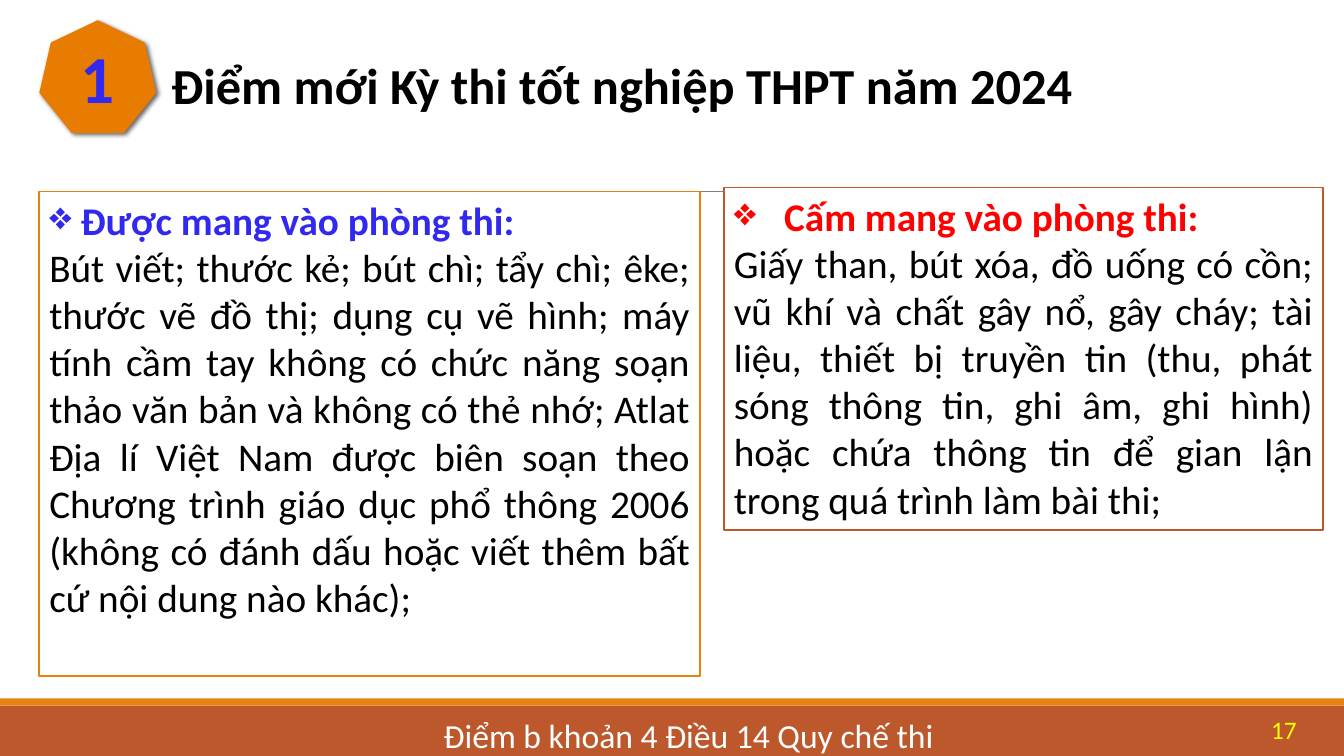
from lxml.etree import SubElement
from pptx import Presentation
from pptx.dml.color import RGBColor
from pptx.enum.shapes import MSO_CONNECTOR, MSO_SHAPE
from pptx.enum.text import MSO_ANCHOR as Anchor, PP_ALIGN as Align
from pptx.oxml.ns import qn
from pptx.util import Inches, Pt

COLORS = {
    "white": "FFFFFF", "black": "000000", "red": "FF0000", "blue": "3129EE",
    "yellow": "FFFF00", "rust": "BD582C", "orange": "E48312",
    "badge": "E77C00", "gray": "808080",
}
ALLOWED = (
    "Bút viết; thước kẻ; bút chì; tẩy chì; êke; thước vẽ đồ thị; dụng cụ vẽ hình; "
    "máy tính cầm tay không có chức năng soạn thảo văn bản và không có thẻ nhớ; "
    "Atlat Địa lí Việt Nam được biên soạn theo Chương trình giáo dục phổ thông 2006 "
    "(không có đánh dấu hoặc viết thêm bất cứ nội dung nào khác);"
)
BANNED = (
    "Giấy than, bút xóa, đồ uống có cồn; vũ khí và chất gây nổ, gây cháy; tài liệu, "
    "thiết bị truyền tin (thu, phát sóng thông tin, ghi âm, ghi hình) hoặc chứa "
    "thông tin để gian lận trong quá trình làm bài thi;"
)


def color(name):
    return RGBColor.from_string(COLORS[name])


def write(paragraph, text, size, color_name, bold=False, align=Align.LEFT):
    paragraph.alignment = align
    run = paragraph.add_run()
    run.text = text
    font_format = {"name": "Calibri", "size": Pt(size), "bold": bold}
    for attribute, value in font_format.items():
        setattr(run.font, attribute, value)
    run.font.color.rgb = color(color_name)


def add_bullet(paragraph, indent):
    properties = paragraph._p.get_or_add_pPr()
    properties.set("marL", str(Inches(indent)))
    properties.set("indent", str(-Inches(indent)))
    SubElement(properties, qn("a:buChar"), char="❖")


def add_block(slide, box, fill, line=None, preset=MSO_SHAPE.RECTANGLE):
    shape = slide.shapes.add_shape(preset, *map(Inches, box))
    shape.shadow.inherit = False
    shape.fill.solid()
    shape.fill.fore_color.rgb = color(fill)
    if line:
        shape.line.color.rgb = color(line)
        shape.line.width = Pt(1.25)
    else:
        shape.line.fill.background()
    return shape


def add_label(slide, box, text, size, color_name, bold=False,
              align=Align.LEFT, anchor=Anchor.TOP):
    frame = slide.shapes.add_textbox(*map(Inches, box)).text_frame
    frame.word_wrap = True
    frame.vertical_anchor = anchor
    write(frame.paragraphs[0], text, size, color_name, bold, align)


def add_panel(slide, box, line, heading, heading_color, indent, body):
    """Add an outlined box with a bulleted heading and justified body text."""
    frame = add_block(slide, box, "white", line).text_frame
    frame.word_wrap = True
    frame.vertical_anchor = Anchor.TOP
    title = frame.paragraphs[0]
    write(title, heading, 28, heading_color, True, Align.JUSTIFY)
    add_bullet(title, indent)
    write(frame.add_paragraph(), body, 28, "black", align=Align.JUSTIFY)


def add_rule(slide, left, right, top):
    rule = slide.shapes.add_connector(
        MSO_CONNECTOR.STRAIGHT, Inches(left), Inches(top), Inches(right), Inches(top))
    rule.line.color.rgb = color("gray")
    rule.line.width = Pt(0.5)
    SubElement(rule._element.spPr, qn("a:effectLst"))


def add_badge(slide, box, number):
    badge = add_block(slide, box, "badge", preset=MSO_SHAPE.HEPTAGON)
    effects = badge._element.spPr.find(qn("a:effectLst"))
    shadow = SubElement(effects, qn("a:outerShdw"), blurRad=str(Pt(3.5)),
                        dist=str(Pt(2)), dir=str(45 * 60000))
    tint = SubElement(shadow, qn("a:srgbClr"), val=COLORS["black"])
    SubElement(tint, qn("a:alpha"), val="60000")
    badge.text_frame.vertical_anchor = Anchor.MIDDLE
    write(badge.text_frame.paragraphs[0], number, 48, "blue", True, Align.CENTER)


def main():
    presentation = Presentation()
    presentation.slide_width = Inches(13.33)
    presentation.slide_height = Inches(7.5)
    slide = presentation.slides.add_slide(presentation.slide_layouts[6])

    add_block(slide, (0, 7, 13.33, 0.5), "rust")
    add_block(slide, (0, 6.93, 13.33, 0.07), "orange")
    add_rule(slide, 1.31, 12.21, 1.9)
    add_label(slide, (1.6, 0.49, 11.18, 0.71),
              "Điểm mới Kỳ thi tốt nghiệp THPT năm 2024", 36, "black", bold=True)
    add_panel(slide, (7.18, 1.86, 5.94, 3.4), "rust",
              "Cấm mang vào phòng thi:", "red", 0.5, BANNED)
    add_panel(slide, (0.39, 1.9, 6.55, 4.81), "orange",
              "Được mang vào phòng thi:", "blue", 0.31, ALLOWED)
    add_label(slide, (2.14, 7.04, 9.38, 0.5),
              "Điểm b khoản 4 Điều 14 Quy chế thi", 24, "white", align=Align.CENTER)
    add_label(slide, (11.53, 7.04, 1.43, 0.4), "17", 18, "yellow",
              align=Align.RIGHT, anchor=Anchor.MIDDLE)
    add_badge(slide, (0.39, 0.2, 1.16, 1.12), "1")
    presentation.save("out.pptx")


if __name__ == "__main__":
    main()
